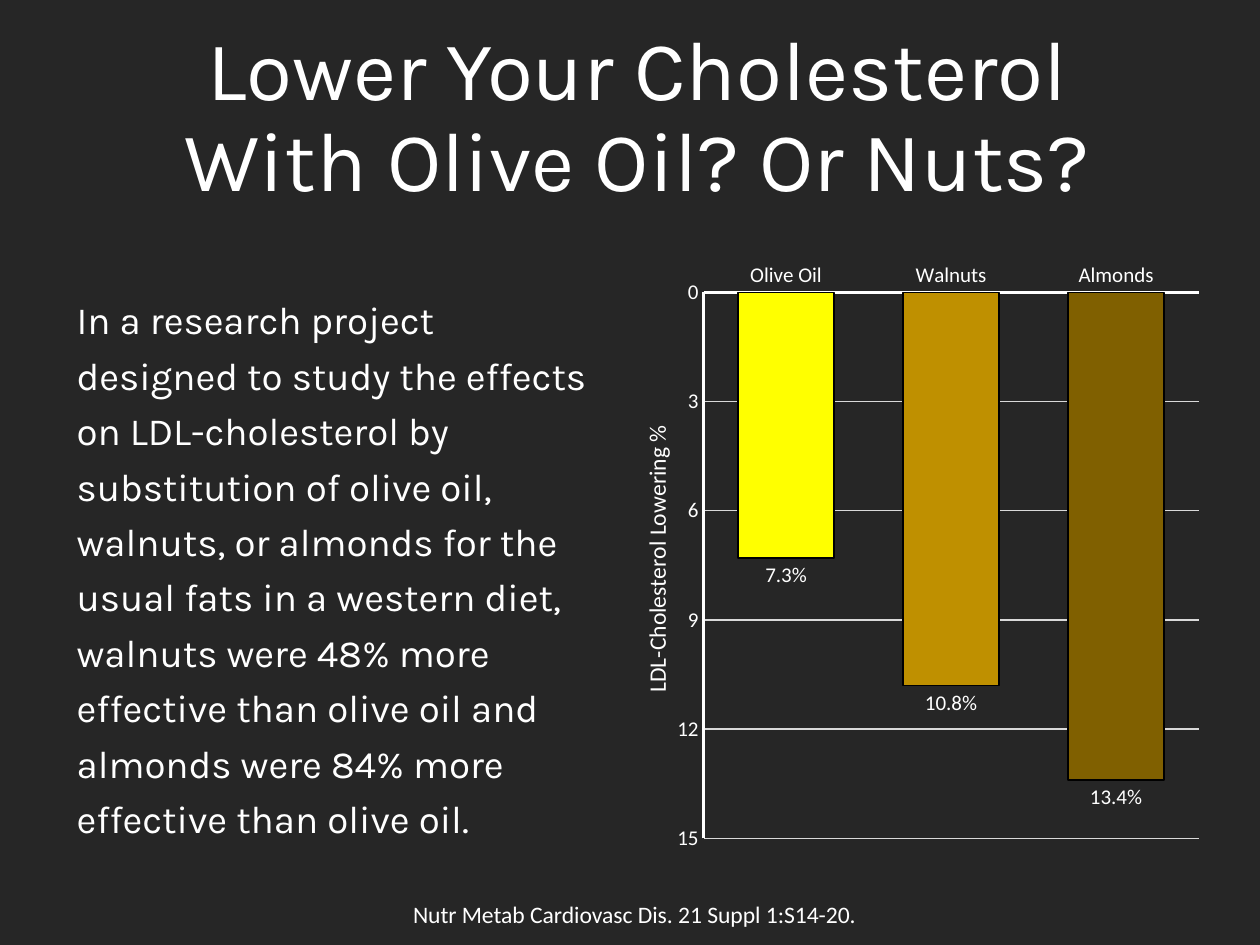
from dataclasses import dataclass

from lxml.etree import SubElement
from pptx import Presentation
from pptx.chart.data import CategoryChartData
from pptx.dml.color import RGBColor
from pptx.enum.chart import XL_CHART_TYPE as ChartType
from pptx.enum.chart import XL_LABEL_POSITION as LabelPosition
from pptx.enum.chart import XL_TICK_MARK as TickMark
from pptx.enum.text import MSO_ANCHOR as Anchor
from pptx.enum.text import PP_ALIGN as Align
from pptx.oxml.ns import qn
from pptx.util import Inches, Pt


@dataclass(frozen=True)
class Theme:
    background: str = "262626"
    text: str = "FFFFFF"
    grid: str = "D9D9D9"
    bar_edge: str = "000000"
    heading_font: str = "Karla"
    chart_font: str = "Calibri"
    title_size: float = 48
    body_size: float = 22
    caption_size: float = 13.5
    label_size: float = 12


@dataclass(frozen=True)
class Box:
    left: float
    top: float
    width: float
    height: float

    def lengths(self):
        return [Inches(n) for n in (self.left, self.top, self.width, self.height)]


@dataclass(frozen=True)
class TextBlock:
    box: Box
    text: str
    font: str
    size: float
    align: Align = Align.LEFT
    anchor: Anchor = Anchor.TOP
    line_spacing: float = 1.0
    side_margins: tuple = (0.1, 0.1)
    wrap: bool = True


@dataclass(frozen=True)
class Bar:
    name: str
    lowering: float
    color: str


THEME = Theme()

TEXTS = [
    TextBlock(Box(0.75, 0.4, 8.62, 1.09),
              "Lower Your Cholesterol With Olive Oil? Or Nuts?",
              THEME.heading_font, THEME.title_size, Align.CENTER, Anchor.MIDDLE,
              0.9, (0.3, 0.3)),
    TextBlock(Box(0.51, 2.23, 4.25, 4.82),
              "In a research project designed to study the effects on LDL-cholesterol "
              "by substitution of olive oil, walnuts, or almonds for the usual fats in a "
              "western diet, walnuts were 48% more effective than olive oil and almonds "
              "were 84% more effective than olive oil.",
              THEME.heading_font, THEME.body_size, line_spacing=1.2,
              side_margins=(0.1, 0.05)),
    TextBlock(Box(3.18, 7.09, 3.77, 0.33),
              "Nutr Metab Cardiovasc Dis. 21 Suppl 1:S14-20.",
              THEME.chart_font, THEME.caption_size, wrap=False),
]

BARS = [
    Bar("Olive Oil", 7.3, "FFFF00"),
    Bar("Walnuts", 10.8, "BF9000"),
    Bar("Almonds", 13.4, "806000"),
]
CHART_BOX = Box(4.76, 1.98, 4.85, 4.87)


def rgb(color: str) -> RGBColor:
    return RGBColor.from_string(color)


def set_font(font, name: str, size: float) -> None:
    font.name = name
    font.size = Pt(size)
    font.bold = False
    font.color.rgb = rgb(THEME.text)


def set_line(line, color: str, width: float) -> None:
    line.color.rgb = rgb(color)
    line.width = Pt(width)


def add_text(slide, block: TextBlock) -> None:
    frame = slide.shapes.add_textbox(*block.box.lengths()).text_frame
    frame.word_wrap = block.wrap
    frame.vertical_anchor = block.anchor
    frame.margin_left, frame.margin_right = map(Inches, block.side_margins)
    paragraph = frame.paragraphs[0]
    paragraph.text = block.text
    paragraph.alignment = block.align
    paragraph.line_spacing = block.line_spacing
    set_font(paragraph.font, block.font, block.size)


def place(layout, target: str | None = None, **fractions: float) -> None:
    """Fill a chart layout element with a manual position, in fractions of the chart."""
    for child in list(layout):
        layout.remove(child)
    manual = SubElement(layout, qn("c:manualLayout"))
    values = {"layoutTarget": target} if target else {}
    values |= {"xMode": "edge", "yMode": "edge"}
    values |= {key: str(value) for key, value in fractions.items()}
    for key, value in values.items():
        SubElement(manual, qn(f"c:{key}")).set("val", value)


def layout_of(element, after: str | None = None):
    """Return the layout child, making it after the named sibling when missing."""
    layout = element.find(qn("c:layout"))
    if layout is None:
        layout = SubElement(element, qn("c:layout"))
        if after:
            element.find(qn(after)).addnext(layout)
        else:
            element.insert(0, layout)
    return layout


def style_axes(chart) -> None:
    for axis in (chart.category_axis, chart.value_axis):
        axis.major_tick_mark = axis.minor_tick_mark = TickMark.NONE
        set_font(axis.tick_labels.font, THEME.chart_font, THEME.label_size)
        set_line(axis.format.line, THEME.text, 2)

    axis = chart.value_axis
    axis.minimum_scale, axis.maximum_scale, axis.major_unit = 0, 15, 3
    axis.reverse_order = True
    axis.tick_labels.number_format = "General"
    axis.tick_labels.number_format_is_linked = False
    set_line(axis.major_gridlines.format.line, THEME.grid, 0.75)

    title = axis.axis_title
    paragraph = title.text_frame.paragraphs[0]
    paragraph.text = "LDL-Cholesterol Lowering %"
    set_font(paragraph.font, THEME.chart_font, THEME.caption_size)
    body = title.text_frame._txBody.bodyPr
    body.set("rot", "-5400000")
    body.set("vert", "horz")
    place(layout_of(title._element, "c:tx"), x=0.06, y=0.28)


def add_lowering_chart(slide) -> None:
    data = CategoryChartData()
    data.categories = [bar.name for bar in BARS]
    data.add_series("Series 1", [bar.lowering for bar in BARS])
    chart = slide.shapes.add_chart(
        ChartType.COLUMN_CLUSTERED, *CHART_BOX.lengths(), data).chart
    chart.has_title = chart.has_legend = False
    set_font(chart.font, THEME.chart_font, 10)
    style_axes(chart)

    plot = chart.plots[0]
    plot.vary_by_categories = False
    plot.gap_width, plot.overlap = 72, -21
    series = plot.series[0]
    for index, bar in enumerate(BARS):
        point = series.points[index].format
        point.fill.solid()
        point.fill.fore_color.rgb = rgb(bar.color)
        set_line(point.line, THEME.bar_edge, 0.75)

    labels = series.data_labels
    labels.show_value = True
    labels.position = LabelPosition.OUTSIDE_END
    labels.number_format = '0.0"%"'
    labels.number_format_is_linked = False
    set_font(labels.font, THEME.chart_font, THEME.label_size)

    plot_area = chart._chartSpace.chart.plotArea
    place(layout_of(plot_area), "inner", x=0.17, y=0.07, w=0.81, h=0.89)


def main() -> None:
    presentation = Presentation()
    presentation.slide_width, presentation.slide_height = Inches(10), Inches(7.5)
    slide = presentation.slides.add_slide(presentation.slide_layouts[6])
    slide.background.fill.solid()
    slide.background.fill.fore_color.rgb = rgb(THEME.background)
    for block in TEXTS:
        add_text(slide, block)
    add_lowering_chart(slide)
    presentation.save("out.pptx")


if __name__ == "__main__":
    main()
